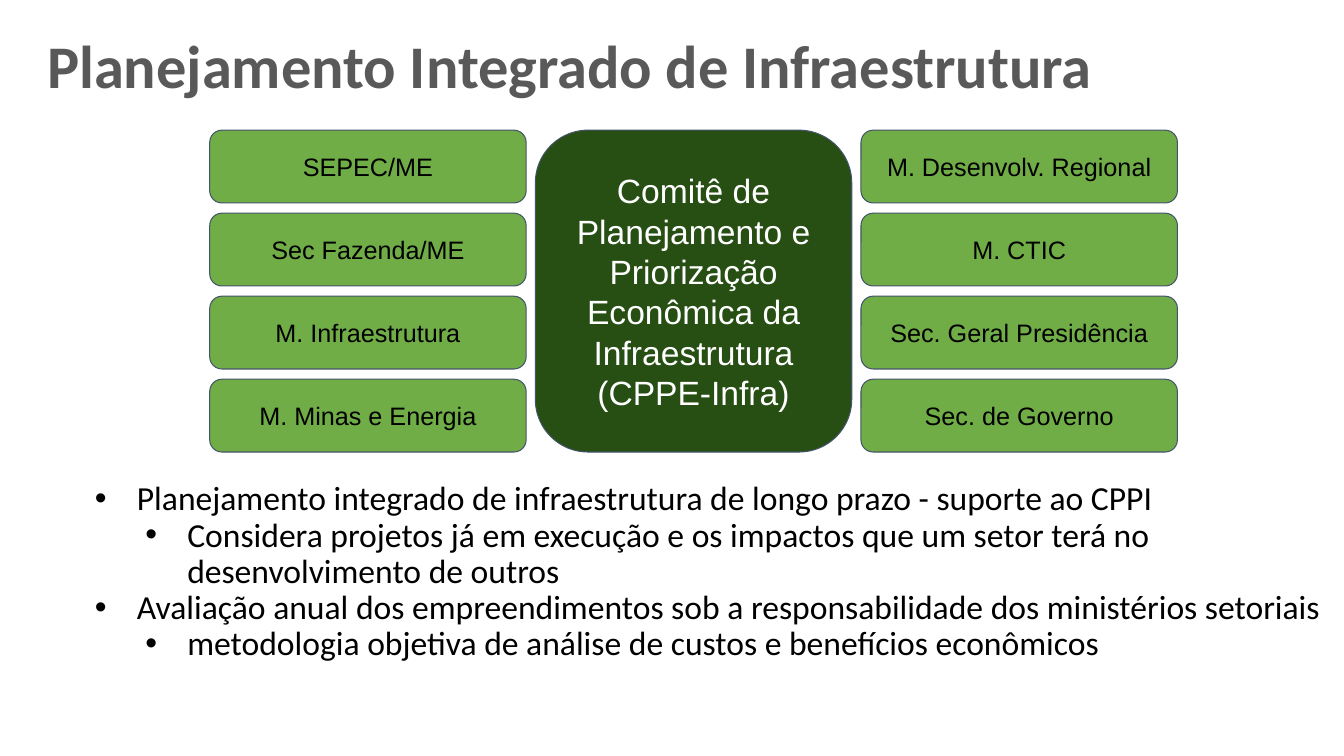
from dataclasses import dataclass

from lxml.etree import SubElement
from pptx import Presentation
from pptx.dml.color import RGBColor
from pptx.enum.shapes import MSO_SHAPE as Preset
from pptx.enum.text import MSO_ANCHOR as Anchor, PP_ALIGN as Align
from pptx.oxml.ns import qn
from pptx.slide import Slide
from pptx.text.text import TextFrame, _Paragraph as Paragraph
from pptx.util import Pt

BLACK = RGBColor(0x00, 0x00, 0x00)
WHITE = RGBColor(0xFF, 0xFF, 0xFF)
GRAY = RGBColor(0x59, 0x59, 0x59)
SLATE = RGBColor(0x44, 0x54, 0x6A)
LIGHT_GREEN = RGBColor(0x70, 0xAD, 0x47)
DARK_GREEN = RGBColor(0x27, 0x4E, 0x13)

GRID_LEFT, GRID_TOP = 149.8, 93
BOX_WIDTH, BOX_HEIGHT = 226, 52
COLUMN_STEP, ROW_STEP = 232.6, 59.3
BULLET_HANGING = 30

LEFT_MEMBERS = ["SEPEC/ME", "Sec Fazenda/ME", "M. Infraestrutura", "M. Minas e Energia"]
RIGHT_MEMBERS = ["M. Desenvolv. Regional", "M. CTIC", "Sec. Geral Presidência", "Sec. de Governo"]
COMMITTEE = "Comitê de Planejamento e Priorização Econômica da Infraestrutura (CPPE-Infra)"


@dataclass
class Box:
    text: str
    column: int
    row: int = 0
    height: float = BOX_HEIGHT
    fill: RGBColor = LIGHT_GREEN
    color: RGBColor = BLACK
    size: float = 18


@dataclass
class Bullet:
    text: str
    level: int = 0


BULLETS = [
    Bullet("Planejamento integrado de infraestrutura de longo prazo - suporte ao CPPI"),
    Bullet("Considera projetos já em execução e os impactos que um setor terá no desenvolvimento de outros", 1),
    Bullet("Avaliação anual dos empreendimentos sob a responsabilidade dos ministérios setoriais"),
    Bullet("metodologia objetiva de análise de custos e benefícios econômicos", 1),
]


def set_values(target: object, values: dict) -> None:
    for name, value in values.items():
        setattr(target, name, value)


def write(paragraph: Paragraph, text: str, color: RGBColor, **font_values: object) -> None:
    run = paragraph.add_run()
    run.text = text
    set_values(run.font, font_values)
    run.font.color.rgb = color


def add_text_box(slide: Slide, left: float, top: float, width: float, height: float, anchor: Anchor) -> TextFrame:
    shape = slide.shapes.add_textbox(Pt(left), Pt(top), Pt(width), Pt(height))
    set_values(shape.text_frame, {"word_wrap": True, "vertical_anchor": anchor})
    return shape.text_frame


def add_box(slide: Slide, box: Box) -> None:
    left = GRID_LEFT + box.column * COLUMN_STEP
    top = GRID_TOP + box.row * ROW_STEP
    shape = slide.shapes.add_shape(
        Preset.ROUNDED_RECTANGLE, Pt(left), Pt(top), Pt(BOX_WIDTH), Pt(box.height))
    shape.shadow.inherit = False
    shape.fill.solid()
    shape.fill.fore_color.rgb = box.fill
    shape.line.color.rgb = SLATE
    shape.line.width = Pt(0.75)
    margins = {f"margin_{side}": Pt(7.2) for side in ("left", "top", "right", "bottom")}
    set_values(shape.text_frame, {"word_wrap": True, "vertical_anchor": Anchor.MIDDLE, **margins})
    paragraph = shape.text_frame.paragraphs[0]
    paragraph.alignment = Align.CENTER
    write(paragraph, box.text, box.color, name="Arial", size=Pt(box.size))


def add_bullet(paragraph: Paragraph, bullet: Bullet) -> None:
    set_values(paragraph, {"level": bullet.level, "line_spacing": 0.9, "space_before": Pt(0)})
    properties = paragraph._p.get_or_add_pPr()
    properties.set("marL", str(Pt(36 * (bullet.level + 1))))
    properties.set("indent", str(-Pt(BULLET_HANGING)))
    color = SubElement(properties, qn("a:buClr"))
    SubElement(color, qn("a:srgbClr"), val=str(BLACK))
    SubElement(properties, qn("a:buFont"), typeface="Arial")
    SubElement(properties, qn("a:buChar"), char="•")
    write(paragraph, bullet.text, BLACK, name="Calibri", size=Pt(24))


def main() -> None:
    presentation = Presentation()
    set_values(presentation, {"slide_width": Pt(960), "slide_height": Pt(540)})
    slide = presentation.slides.add_slide(presentation.slide_layouts[6])

    title = add_text_box(slide, 26.6, 7.2, 828, 84.2, Anchor.MIDDLE).paragraphs[0]
    title.line_spacing = 0.9
    write(title, "Planejamento Integrado de Infraestrutura", GRAY, name="Calibri", size=Pt(43.2), bold=True)

    body = add_text_box(slide, 54.7, 340.6, 902.9, 191.5, Anchor.TOP)
    for index, bullet in enumerate(BULLETS):
        add_bullet(body.add_paragraph() if index else body.paragraphs[0], bullet)

    for column, members in ((0, LEFT_MEMBERS), (2, RIGHT_MEMBERS)):
        for row, member in enumerate(members):
            add_box(slide, Box(member, column, row))
    committee_height = (len(LEFT_MEMBERS) - 1) * ROW_STEP + BOX_HEIGHT
    add_box(slide, Box(COMMITTEE, 1, height=committee_height, fill=DARK_GREEN, color=WHITE, size=24))

    presentation.save("out.pptx")


if __name__ == "__main__":
    main()
